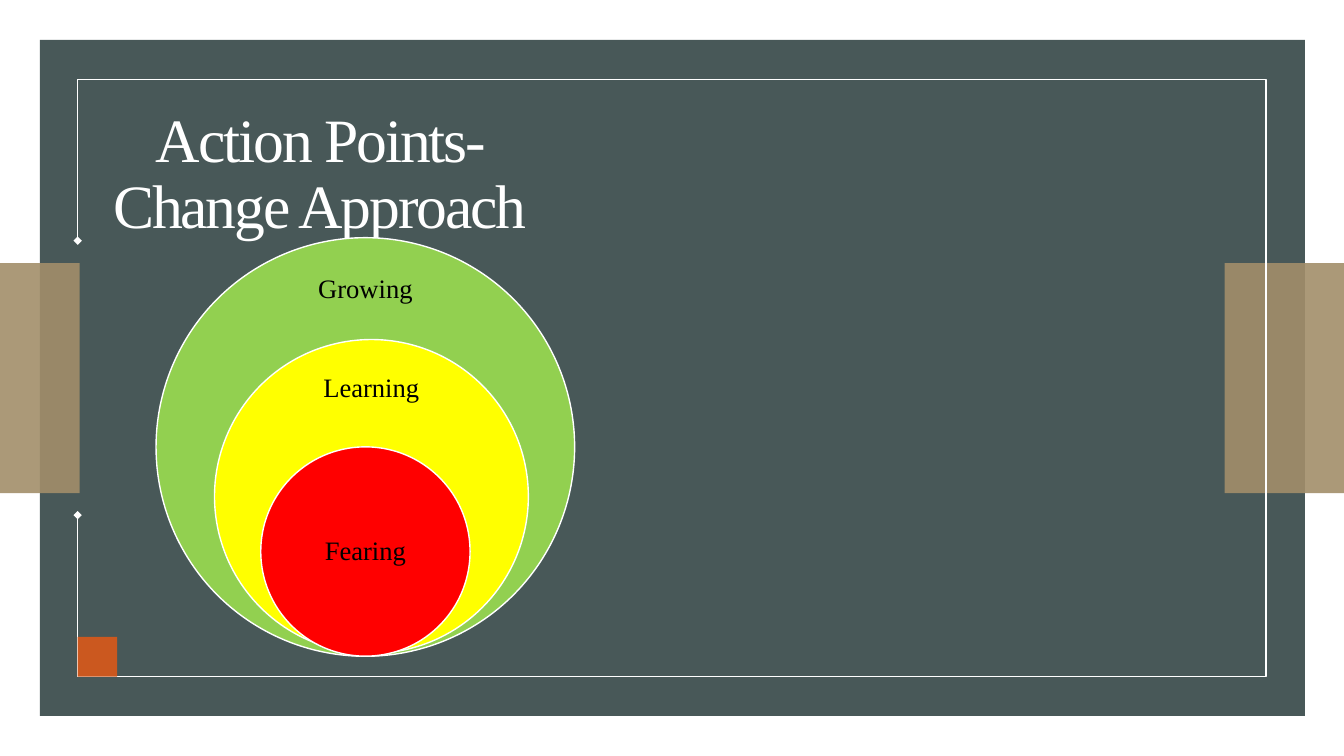
from dataclasses import dataclass

from lxml.etree import SubElement
from pptx import Presentation
from pptx.dml.color import RGBColor
from pptx.enum.shapes import MSO_SHAPE as Preset
from pptx.enum.text import MSO_ANCHOR as Anchor, PP_ALIGN as Align
from pptx.oxml.ns import qn
from pptx.shapes.autoshape import Shape
from pptx.util import Pt

WHITE = RGBColor(0xFF, 0xFF, 0xFF)
BLACK = RGBColor(0x00, 0x00, 0x00)
SLATE = RGBColor(0x48, 0x58, 0x58)
TAN = RGBColor(0xA2, 0x8E, 0x6A)
ORANGE = RGBColor(0xCB, 0x58, 0x1F)
GREEN = RGBColor(0x92, 0xD0, 0x50)
YELLOW = RGBColor(0xFF, 0xFF, 0x00)
RED = RGBColor(0xFF, 0x00, 0x00)
FONT = "Times New Roman"


@dataclass(frozen=True)
class Box:
    left: float
    top: float
    width: float
    height: float

    def emu(self) -> tuple[Pt, ...]:
        return tuple(Pt(v) for v in (self.left, self.top, self.width, self.height))


@dataclass(frozen=True)
class Panel:
    box: Box
    color: RGBColor
    opacity: int = 100


@dataclass(frozen=True)
class Zone:
    """One nested circle and the box of its label."""
    label: str
    color: RGBColor
    left: float
    top: float
    diameter: float
    label_box: Box


PANELS = [
    Panel(Box(28.4, 28.4, 903.6, 483), SLATE),
    Panel(Box(0, 188, 56.9, 164.2), TAN, 90),
    Panel(Box(874.8, 188, 85.2, 164.2), TAN, 90),
]
CORNER = Panel(Box(55.5, 455, 28.3, 28.3), ORANGE)
FRAME = [(55.5, 172), (55.5, 56.8), (904.3, 56.8),
         (904.3, 483.2), (55.5, 483.2), (55.5, 368)]
TITLE_BOX = Box(70.6, 71.3, 316, 105.1)
ZONES = [
    Zone("Growing", GREEN, 111.5, 169.8, 299, Box(208.8, 184.5, 104.4, 44.6)),
    Zone("Learning", YELLOW, 153.2, 242.5, 224.2, Box(213, 256.5, 104.4, 41.8)),
    Zone("Fearing", RED, 186.3, 319.2, 149.5, Box(208.1, 356.5, 105.8, 74.9)),
]


def add_filled(shapes, preset: Preset, box: Box, color: RGBColor) -> Shape:
    sp = shapes.add_shape(preset, *box.emu())
    sp.shadow.inherit = False
    sp.fill.solid()
    sp.fill.fore_color.rgb = color
    sp.line.fill.background()
    return sp


def set_outline(sp: Shape) -> None:
    sp.line.color.rgb = WHITE
    sp.line.width = Pt(1)


def add_panel(shapes, panel: Panel) -> None:
    sp = add_filled(shapes, Preset.RECTANGLE, panel.box, panel.color)
    if panel.opacity < 100:
        clr = sp.fill._xPr.find(qn("a:solidFill"))[0]
        SubElement(clr, qn("a:alpha"), val=str(panel.opacity * 1000))


def add_frame(shapes) -> None:
    """Draw the open border, with a diamond at each loose end."""
    start, *rest = [(Pt(x), Pt(y)) for x, y in FRAME]
    builder = shapes.build_freeform(*start)
    builder.add_line_segments(rest, close=False)
    sp = builder.convert_to_shape()
    sp.shadow.inherit = False
    sp.fill.background()
    set_outline(sp)
    ln = sp.line._get_or_add_ln()
    for end in ("a:headEnd", "a:tailEnd"):
        SubElement(ln, qn(end), type="diamond")


def add_text(shapes, box: Box, text: str, size: float, color: RGBColor,
             anchor: Anchor, insets: tuple[float, float],
             spacing: float = 0) -> None:
    tf = shapes.add_textbox(*box.emu()).text_frame
    tf.word_wrap = True
    tf.vertical_anchor = anchor
    tf.margin_left = tf.margin_right = Pt(insets[0])
    tf.margin_top = tf.margin_bottom = Pt(insets[1])
    p = tf.paragraphs[0]
    p.alignment = Align.CENTER
    p.line_spacing = 0.9
    r = p.add_run()
    r.text = text
    r.font.name = FONT
    r.font.size = Pt(size)
    r.font.color.rgb = color
    if spacing:
        r.font._element.set("spc", str(round(spacing * 100)))


def add_zone(shapes, zone: Zone) -> None:
    circle = Box(zone.left, zone.top, zone.diameter, zone.diameter)
    set_outline(add_filled(shapes, Preset.OVAL, circle, zone.color))
    add_text(shapes, zone.label_box, zone.label, 19, BLACK,
             Anchor.MIDDLE, (10.8, 10.8))


def main() -> None:
    prs = Presentation()
    prs.slide_width, prs.slide_height = Pt(960), Pt(540)
    s = prs.slides.add_slide(prs.slide_layouts[6])
    for panel in PANELS:
        add_panel(s.shapes, panel)
    add_frame(s.shapes)
    add_panel(s.shapes, CORNER)
    add_text(s.shapes, TITLE_BOX, "Action Points- Change Approach", 44, WHITE,
             Anchor.BOTTOM, (7.2, 3.6), spacing=-1.5)
    for zone in ZONES:
        add_zone(s.shapes, zone)
    prs.save("out.pptx")


if __name__ == "__main__":
    main()
